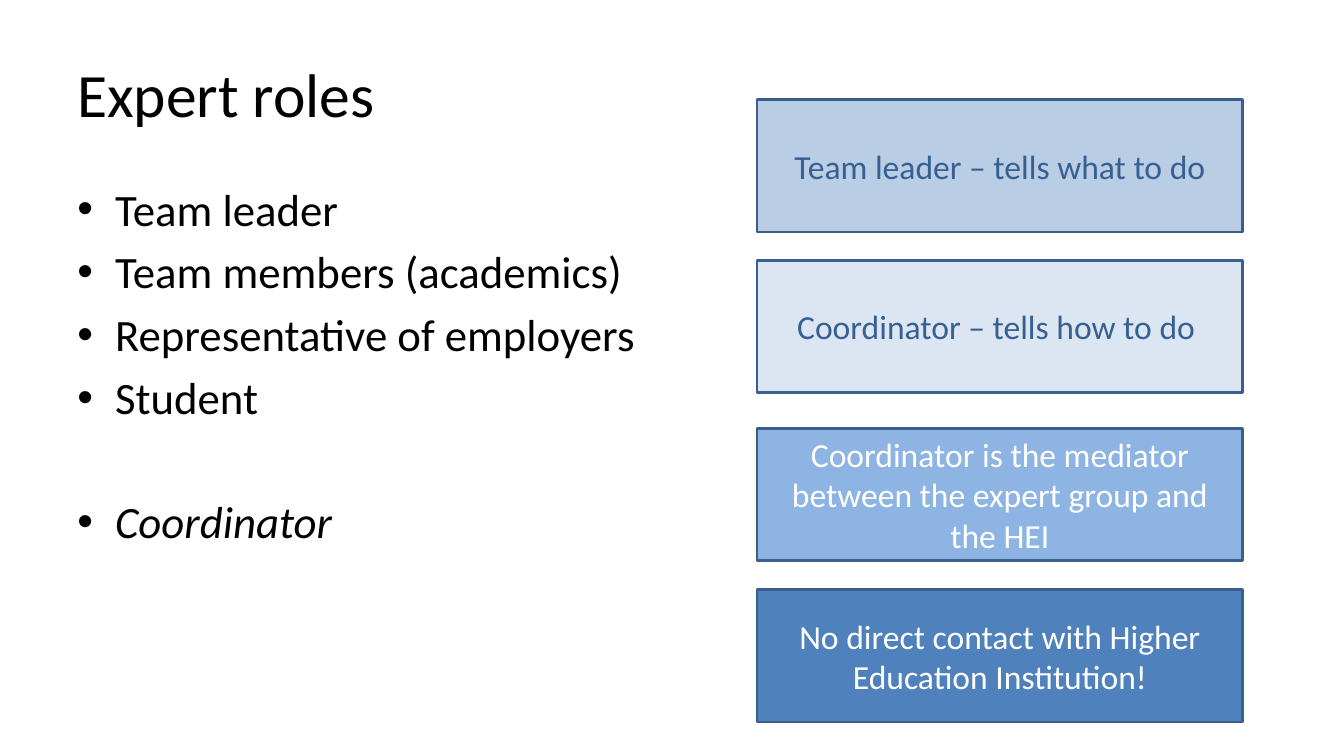
from pptx import Presentation
from pptx.dml.color import RGBColor
from pptx.enum.shapes import MSO_SHAPE
from pptx.enum.text import MSO_ANCHOR, MSO_AUTO_SIZE, PP_ALIGN
from pptx.util import Pt

RECTANGLE = MSO_SHAPE.RECTANGLE
MIDDLE = MSO_ANCHOR.MIDDLE
NO_FIT = MSO_AUTO_SIZE.NONE
LEFT, CENTER = PP_ALIGN.LEFT, PP_ALIGN.CENTER

ROLES = ["Team leader", "Team members (academics)", "Representative of employers", "Student"]
SUPPORT_ROLE = "Coordinator"
RULES = [
    (71.3, "B9CDE5", "376092", "Team leader – tells what to do"),
    (185.8, "DCE6F2", "376092", "Coordinator – tells how to do "),
    (306, "8EB4E3", "FFFFFF", "Coordinator is the mediator between the expert group and the HEI"),
    (421.2, "4F81BD", "FFFFFF", "No direct contact with Higher Education Institution!"),
]


def color(hex_code):
    return RGBColor.from_string(hex_code)


class SlideBuilder:
    font = "Calibri"
    ink = "000000"
    outline = "3A5F8C"

    def __init__(self, deck):
        self.slide = deck.slides.add_slide(deck.slide_layouts[1])

    def place(self, shape, left, top, width, height):
        shape.left, shape.top = Pt(left), Pt(top)
        shape.width, shape.height = Pt(width), Pt(height)
        shape.text_frame.auto_size = NO_FIT

    def add_span(self, para, text, size, ink, align=LEFT, italic=None):
        para.alignment = align
        span = para.add_run()
        span.text = text
        span.font.name = self.font
        span.font.size = Pt(size)
        span.font.italic = italic
        span.font.color.rgb = color(ink)

    def title(self, text):
        box = self.slide.shapes.title
        self.place(box, 48, 21.6, 864, 90)
        box.text_frame.vertical_anchor = MIDDLE
        self.add_span(box.text_frame.paragraphs[0], text, 44, self.ink)

    def role_list(self, roles, support_role):
        box = self.slide.placeholders[1]
        self.place(box, 48, 126, 864, 356.4)
        frame = box.text_frame
        for index, role in enumerate(roles):
            para = frame.add_paragraph() if index else frame.paragraphs[0]
            self.add_span(para, role, 32, self.ink)
        para = frame.add_paragraph()
        para.space_before = Pt(50.4)
        self.add_span(para, support_role, 32, self.ink, italic=True)

    def rule_box(self, top, fill, ink, text):
        box = self.slide.shapes.add_shape(RECTANGLE, Pt(540.7), Pt(top), Pt(347), Pt(94.5))
        box.shadow.inherit = False
        box.fill.solid()
        box.fill.fore_color.rgb = color(fill)
        box.line.color.rgb = color(self.outline)
        box.line.width = Pt(2)
        frame = box.text_frame
        frame.word_wrap = True
        frame.vertical_anchor = MIDDLE
        self.add_span(frame.paragraphs[0], text, 24, ink, CENTER)


def main():
    deck = Presentation()
    deck.slide_width, deck.slide_height = Pt(960), Pt(540)
    builder = SlideBuilder(deck)
    builder.title("Expert roles")
    builder.role_list(ROLES, SUPPORT_ROLE)
    for rule in RULES:
        builder.rule_box(*rule)
    deck.save("out.pptx")


if __name__ == "__main__":
    main()
